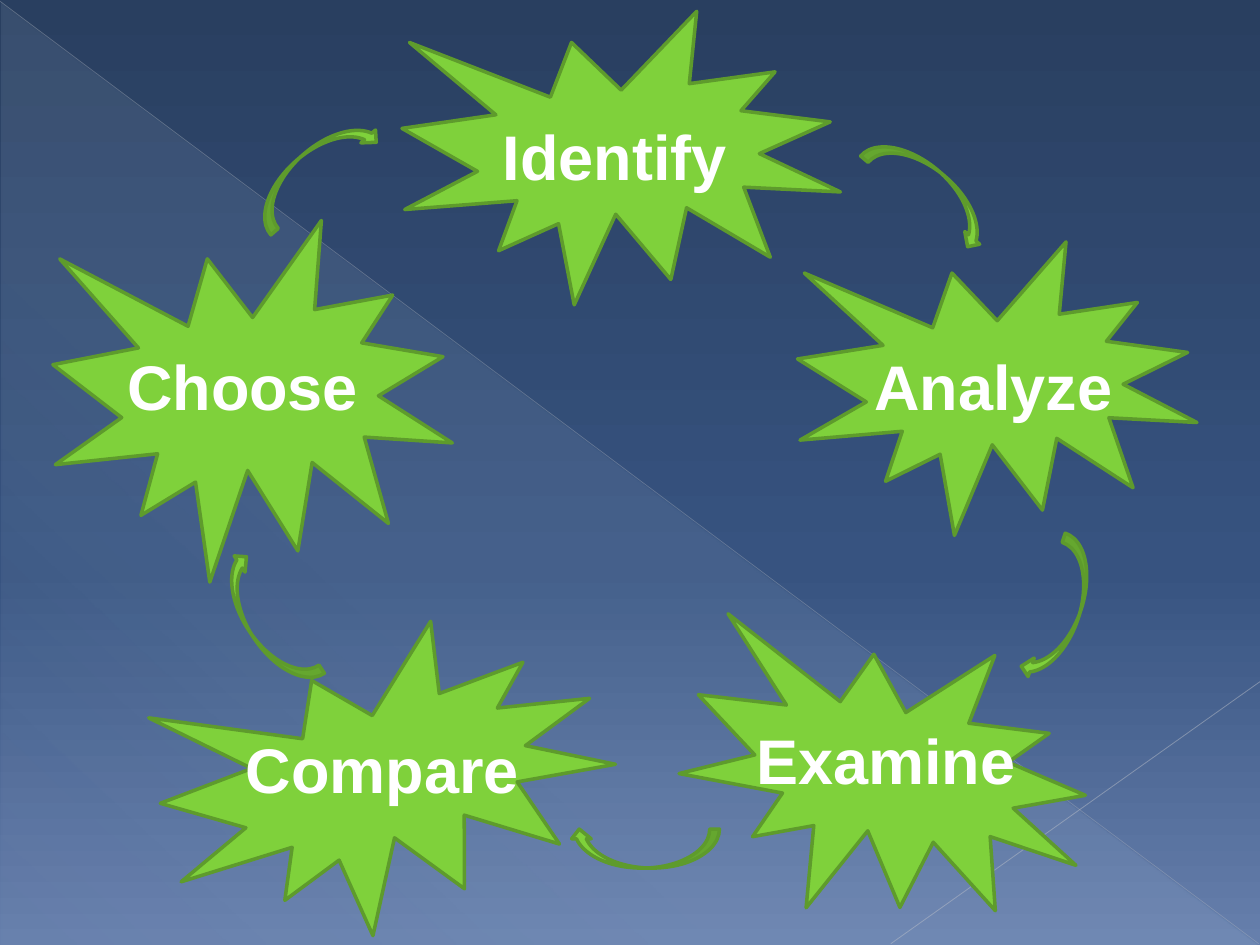
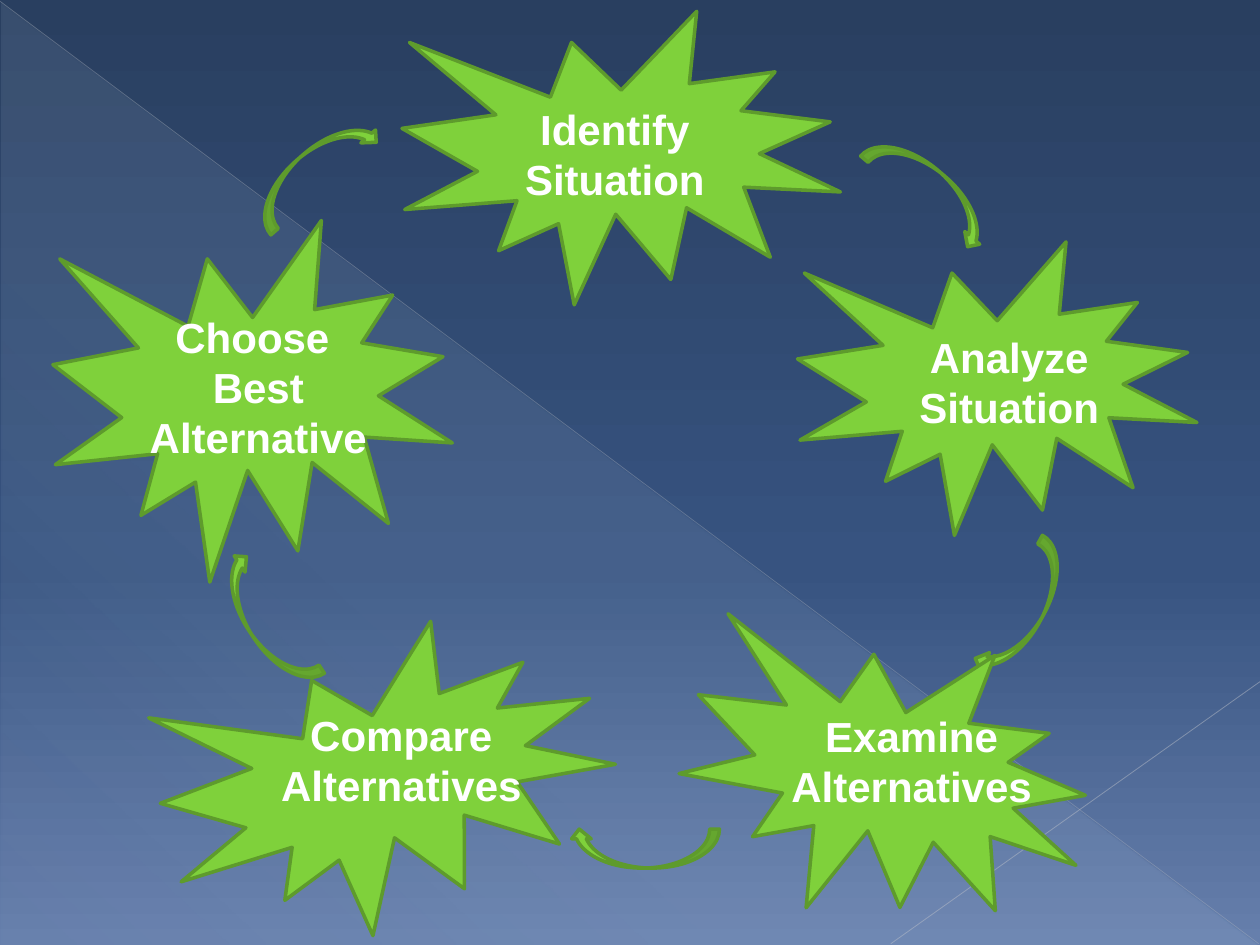
from pptx import Presentation
from pptx.dml.color import RGBColor
from pptx.enum.shapes import MSO_CONNECTOR as Connector, MSO_SHAPE as Shape
from pptx.enum.text import MSO_AUTO_SIZE as AutoSize, PP_ALIGN as Align
from pptx.oxml.ns import qn
from pptx.util import Inches, Pt
from lxml.etree import SubElement

GREEN = RGBColor(0x7F, 0xD1, 0x3B)
DARK_GREEN = RGBColor(0x5E, 0x9B, 0x2C)
WHITE = RGBColor(0xFF, 0xFF, 0xFF)
PALE = RGBColor(0xD6, 0xEC, 0xFF)
DIAGONAL = RGBColor(0xB7, 0xBC, 0xC5)
CORNER = RGBColor(0xBF, 0xC3, 0xCB)
NAVY = RGBColor(0x29, 0x3F, 0x60)
BLUE = RGBColor(0x37, 0x53, 0x80)
SKY = RGBColor(0x66, 0x7F, 0xAC)
FONT = "Arial"

# Gradient stops: position %, colour, opacity %
SKY_STOPS = [(0, NAVY, 100), (60, BLUE, 100), (100, SKY, 100)]
SHEEN_STOPS = [(0, PALE, 10), (70, PALE, 8), (100, PALE, 1)]

# Bursts: left, top, width, height, rotation
BURSTS = [
    (3.19, 0.09, 3.48, 2.33, 0),
    (1.28, 5.04, 3.59, 2.33, 347.1),
    (5.42, 5.01, 3.25, 2.33, 15.5),
    (6.33, 1.92, 3.17, 2.33, 0),
    (0.42, 1.75, 3.17, 2.87, 0),
]

# Arrows: left, top, rotation; all share one size
ARROW_SIZE = (0.31, 1.19)
ARROWS = [
    (7.23, 0.91, 310.3),
    (2.34, 0.76, 228.7),
    (1.96, 4.34, 146.2),
    (4.96, 6.14, 90),
]

# Each cycle: text size, arrow from Analyze to Examine, labels with their boxes
CYCLES = [
    (36, (8.26, 4.25, 18.3), [
        ("Identify", 3.88, 0.88, 2, 0.71),
        ("Analyze", 6.83, 2.71, 2.11, 0.71),
        ("Examine", 5.89, 5.68, 2.28, 0.71),
        ("Compare", 1.84, 5.75, 2.39, 0.71),
        ("Choose ", 0.9, 2.71, 2.19, 0.71),
    ]),
    (24, (7.97, 4.25, 28.6), [
        ("Identify\nSituation", 4.06, 0.77, 1.64, 0.91),
        ("Analyze\nSituation", 7.19, 2.58, 1.64, 0.91),
        ("Examine\nAlternatives", 6.17, 5.59, 2.13, 0.91),
        ("Compare\nAlternatives", 2.12, 5.58, 2.13, 0.91),
        ("Choose \nBest\nAlternative", 1.08, 2.42, 1.94, 1.31),
    ]),
]


def add_alpha(color_element, percent):
    SubElement(color_element, qn("a:alpha"), val=str(percent * 1000))


def set_gradient(fill, owner, stops, angle):
    fill.gradient()
    gradient = next(owner.iter(qn("a:gradFill")))
    stop_list = gradient.find(qn("a:gsLst"))
    for old_stop in list(stop_list):
        stop_list.remove(old_stop)
    for position, color, opacity in stops:
        stop = SubElement(stop_list, qn("a:gs"), pos=str(position * 1000))
        color_element = SubElement(stop, qn("a:srgbClr"), val=str(color))
        if opacity < 100:
            add_alpha(color_element, opacity)
    gradient.find(qn("a:lin")).set("ang", str(angle * 60000))


class CycleDeck:
    def __init__(self):
        self.deck = Presentation()
        self.deck.slide_width = Inches(10)
        self.deck.slide_height = Inches(7.5)
        self.page = None

    def add_page(self):
        self.page = self.deck.slides.add_slide(self.deck.slide_layouts[6])
        set_gradient(self.page.background.fill, self.page._element, SKY_STOPS, 90)
        # Pale sheen and thin lines behind the cycle
        sheen = self.shape(Shape.RIGHT_TRIANGLE, 0.01, 0.02, 9.98, 7.48)
        set_gradient(sheen.fill, sheen._element, SHEEN_STOPS, 133)
        sheen.line.fill.background()
        self.line((0, 0.01), (9.99, 7.49), DIAGONAL, 0.39, 35)
        self.line((10, 5.41), (7.07, 7.49), CORNER, 0.47, 45)

    def shape(self, kind, left, top, width, height, rotation=0):
        shape = self.page.shapes.add_shape(
            kind, Inches(left), Inches(top), Inches(width), Inches(height))
        shape.rotation = rotation
        shape.shadow.inherit = False
        return shape

    def green_shape(self, kind, *place):
        shape = self.shape(kind, *place)
        shape.fill.solid()
        shape.fill.fore_color.rgb = GREEN
        shape.line.color.rgb = DARK_GREEN
        shape.line.width = Pt(2)

    def burst(self, *place):
        self.green_shape(Shape.EXPLOSION1, *place)

    def arrow(self, left, top, rotation):
        self.green_shape(Shape.CURVED_LEFT_ARROW, left, top, *ARROW_SIZE, rotation)

    def line(self, start, end, color, width, opacity):
        line = self.page.shapes.add_connector(
            Connector.STRAIGHT, *(Inches(value) for value in start + end))
        line.line.color.rgb = color
        line.line.width = Pt(width)
        add_alpha(next(line._element.iter(qn("a:srgbClr"))), opacity)
        SubElement(line._element.spPr, qn("a:effectLst"))

    def label(self, text, left, top, width, height, size):
        box = self.page.shapes.add_textbox(
            Inches(left), Inches(top), Inches(width), Inches(height))
        frame = box.text_frame
        frame.text = text
        frame.word_wrap = False
        frame.auto_size = AutoSize.SHAPE_TO_FIT_TEXT
        for para in frame.paragraphs:
            para.alignment = Align.CENTER
            for span in para.runs:
                span.font.name = FONT
                span.font.size = Pt(size)
                span.font.bold = True
                span.font.color.rgb = WHITE


def main():
    cycle = CycleDeck()
    for text_size, examine_arrow, labels in CYCLES:
        cycle.add_page()
        for place in ARROWS + [examine_arrow]:
            cycle.arrow(*place)
        for place in BURSTS:
            cycle.burst(*place)
        for label in labels:
            cycle.label(*label, text_size)
    cycle.deck.save("out.pptx")


if __name__ == "__main__":
    main()
